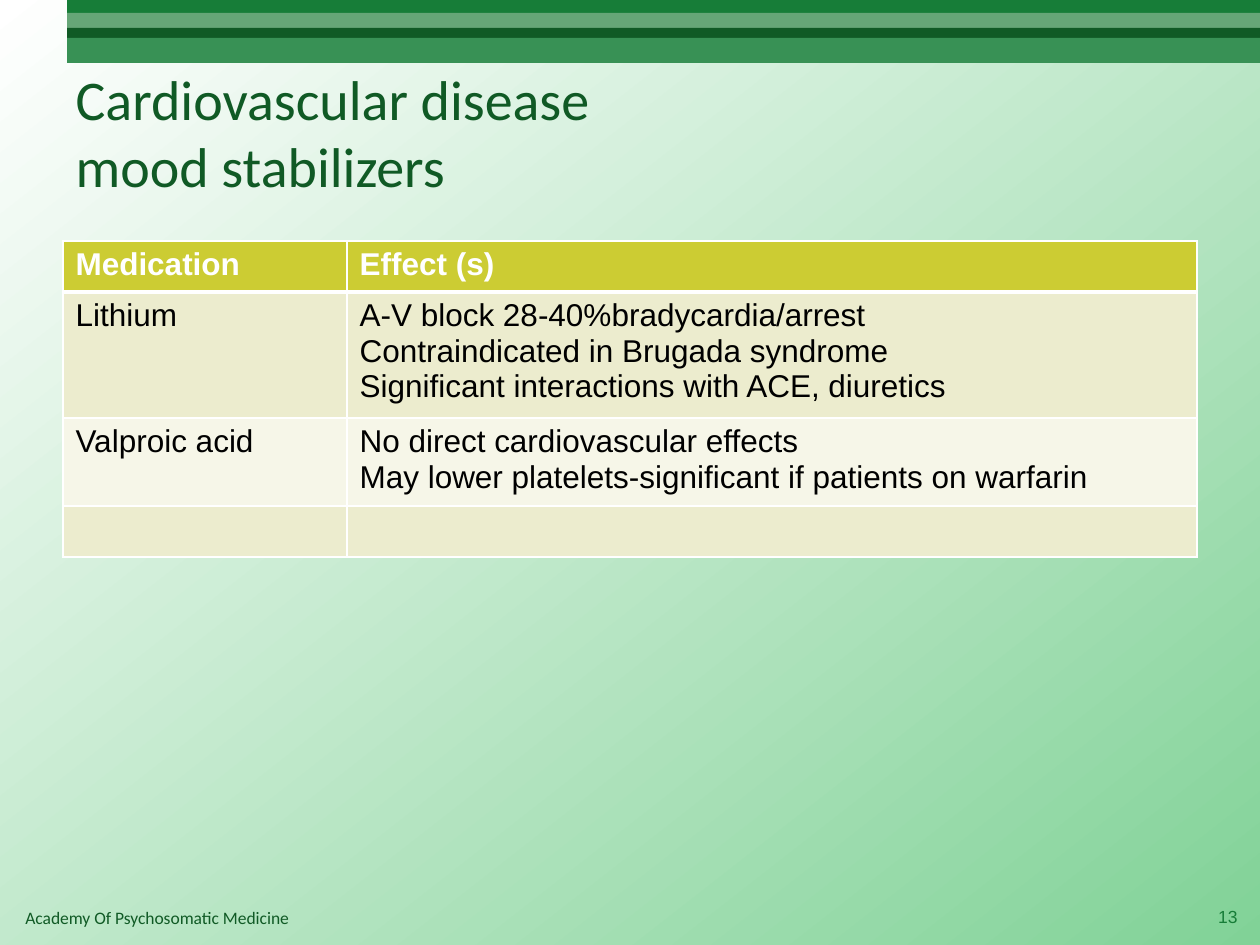
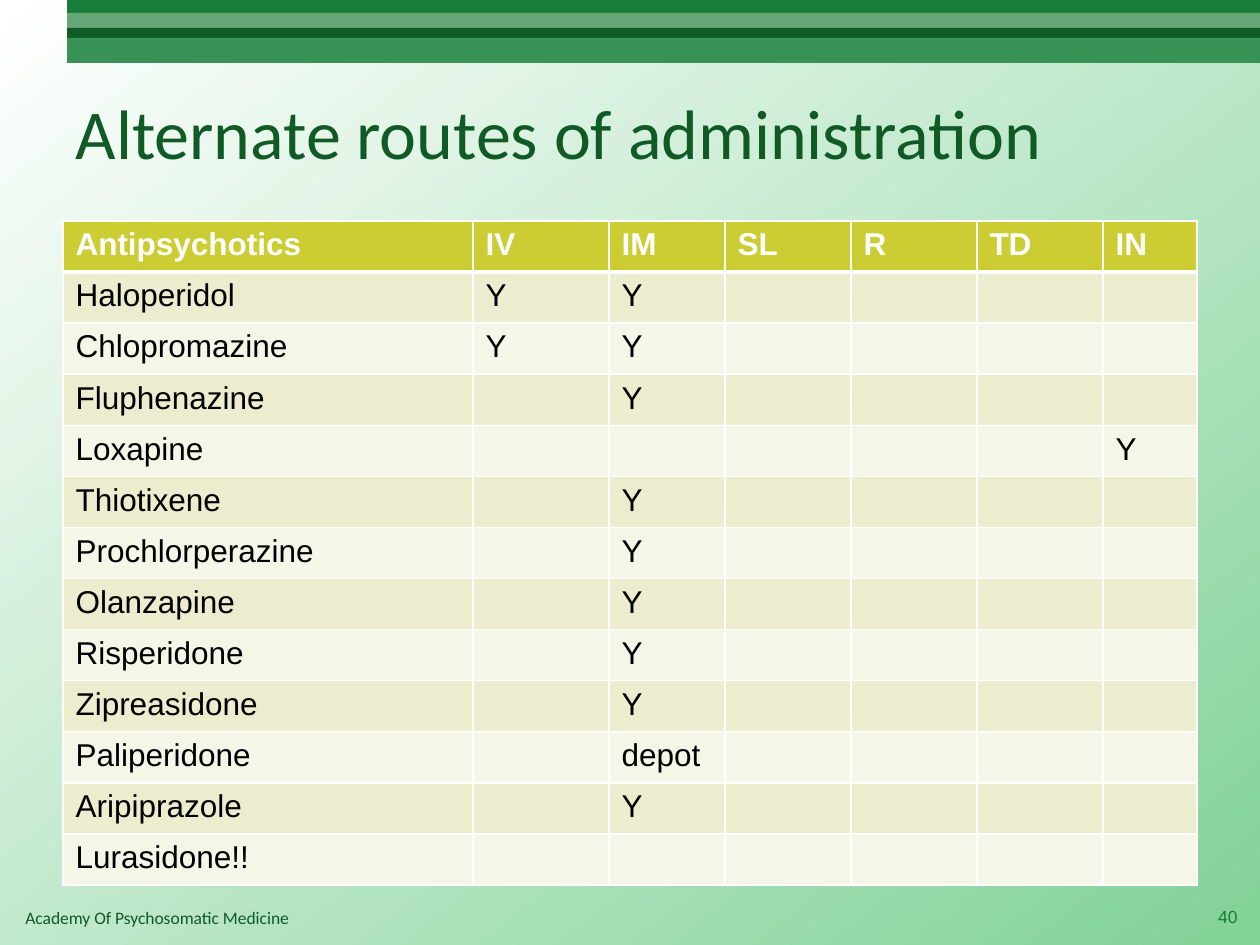
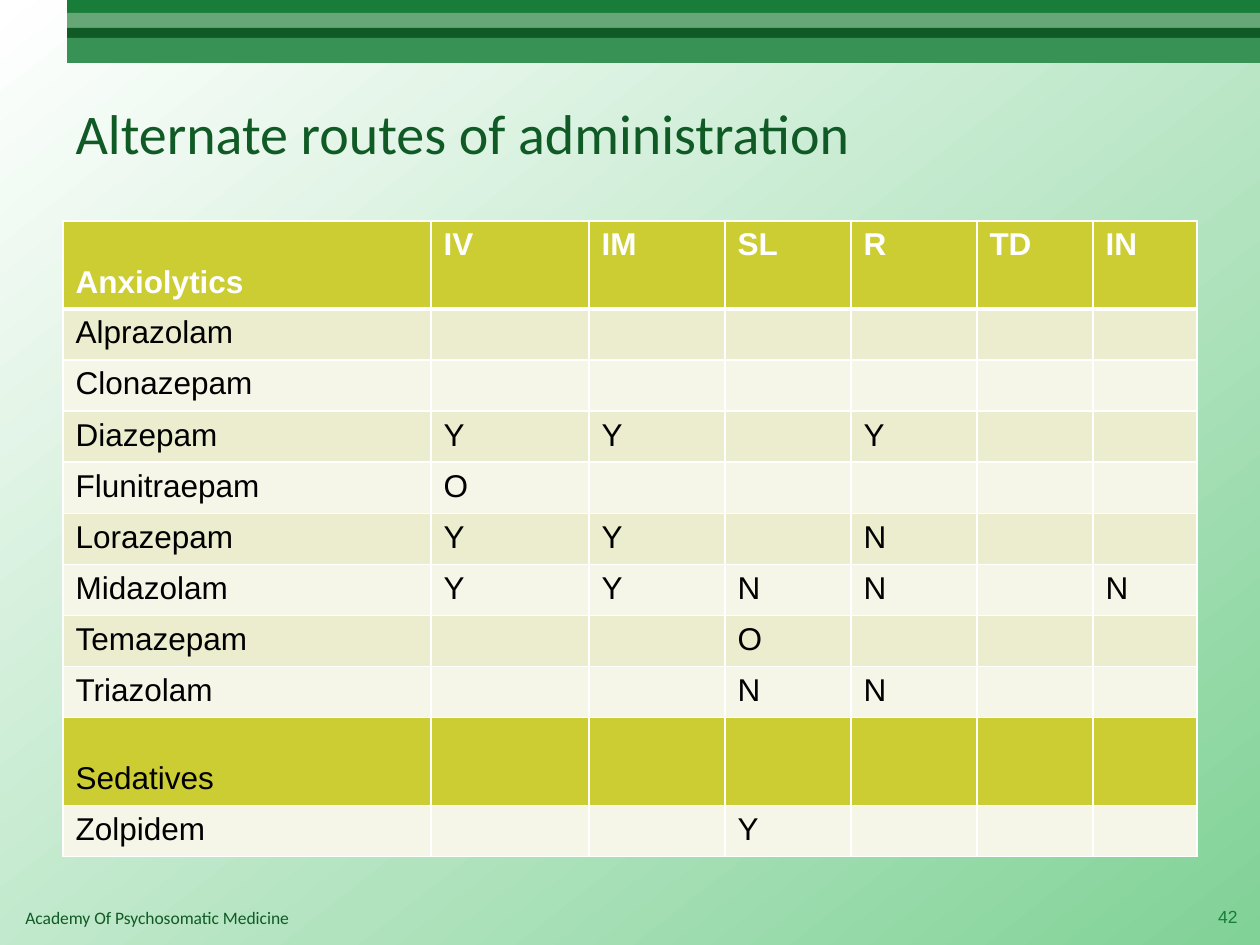
from pptx import Presentation
from pptx import util as u
from pptx.dml.color import RGBColor
from pptx.enum import shapes, text
from pptx.oxml import parse_xml
from pptx.oxml.ns import nsdecls

HUES = {
    "dark": "105A25", "green": "177D38", "mid": "389155", "pale": "66A677",
    "mint": "81D297", "white": "FFFFFF", "black": "000000",
    "head": "CCCC33", "odd": "ECECCE", "even": "F6F6E8",
}
FOOT = "Academy Of Psychosomatic Medicine"
ROUTES = "|IV|IM|SL|R|TD|IN"
ROW, TALL = 51, 88  # heights of one-line and two-line rows


def px(n):
    return u.Emu(n * 914400 // 126)


def style(frame, size, face, hue, bold=False, align=text.PP_ALIGN.LEFT):
    for para in frame.paragraphs:
        para.alignment = align
        for run in para.runs:
            run.font.size = u.Pt(size)
            run.font.name = face
            run.font.bold = bold
            run.font.color.rgb = RGBColor.from_string(HUES[hue])


# Each cell row is "name|column 1|column 2|..."; missing cells stay empty
pages = [
    {
        "title": "Cardiovascular disease\vmood stabilizers", "size": 32, "page": "13",
        "top": 241, "cols": [284, 850], "tall": {1: 126, 2: TALL}, "heads": [0],
        "rows": [
            "Medication|Effect (s)",
            "Lithium|A-V block 28-40%bradycardia/arrest\n"
            "Contraindicated in Brugada syndrome\n"
            "Significant interactions with ACE, diuretics",
            "Valproic acid|No direct cardiovascular effects\n"
            "May lower platelets-significant if patients on warfarin",
            "",
        ],
    },
    {
        "title": "Alternate routes of administration", "size": 40, "page": "40",
        "top": 221, "cols": [410, 136, 116, 126, 126, 126, 94], "tall": {}, "heads": [0],
        "rows": [
            "Antipsychotics" + ROUTES, "Haloperidol|Y|Y", "Chlopromazine|Y|Y",
            "Fluphenazine||Y", "Loxapine||||||Y", "Thiotixene||Y",
            "Prochlorperazine||Y", "Olanzapine||Y", "Risperidone||Y",
            "Zipreasidone||Y", "Paliperidone||depot", "Aripiprazole||Y",
            "Lurasidone!!",
        ],
    },
    {
        "title": "Alternate routes of administration", "size": 32, "page": "42",
        "top": 221, "cols": [368, 158, 136, 126, 126, 116, 104],
        "tall": {0: TALL, 9: TALL}, "heads": [0, 9],
        "rows": [
            "Anxiolytics" + ROUTES, "Alprazolam", "Clonazepam", "Diazepam|Y|Y||Y",
            "Flunitraepam|O", "Lorazepam|Y|Y||N", "Midazolam|Y|Y|N|N||N",
            "Temazepam|||O", "Triazolam|||N|N", "Sedatives", "Zolpidem|||Y",
        ],
    },
]

prs = Presentation()
prs.slide_width, prs.slide_height = px(1260), px(945)

# Shared layout: background, title place
base = prs.slide_layouts[5]
fill = base.background.fill
fill.gradient()
fill.gradient_angle = 308
for stop, hue in zip(fill.gradient_stops, ("white", "mint")):
    stop.color.rgb = RGBColor.from_string(HUES[hue])
for hold in list(base.placeholders):
    if hold.placeholder_format.idx:
        hold.element.getparent().remove(hold.element)
    else:
        hold.left, hold.top, hold.width, hold.height = px(63), px(53), px(1134), px(158)

# Shared bands and footer, drawn on the first slide and moved to the layout
first = prs.slides.add_slide(base)
parts = []
for top, high, hue in ((0, 14, "green"), (13, 16, "pale"), (28, 11, "dark"), (38, 25, "mid")):
    band = first.shapes.add_shape(shapes.MSO_SHAPE.RECTANGLE, px(67), px(top), px(1193), px(high))
    band.shadow.inherit = False
    band.fill.solid()
    band.fill.fore_color.rgb = RGBColor.from_string(HUES[hue])
    band.line.fill.background()
    parts.append(band)
foot = first.shapes.add_textbox(px(13), px(901), px(874), px(34))
foot.text_frame.word_wrap = True
foot.text_frame.text = FOOT
style(foot.text_frame, 10, "Calibri", "dark")
for part in parts + [foot]:
    base.shapes.element.append(part.element)

for num, page in enumerate(pages):
    slide = prs.slides.add_slide(base) if num else first

    # Title
    frame = slide.shapes.title.text_frame
    frame.text = page["title"]
    frame.auto_size = text.MSO_AUTO_SIZE.NONE
    frame.vertical_anchor = text.MSO_ANCHOR.MIDDLE
    style(frame, page["size"], "Calibri", "dark")

    # Table
    rows, cols = page["rows"], page["cols"]
    highs = [page["tall"].get(r, ROW) for r in range(len(rows))]
    grid = slide.shapes.add_table(len(rows), len(cols), px(63), px(page["top"]),
                                  px(sum(cols)), px(sum(highs))).table
    for c, wide in enumerate(cols):
        grid.columns[c].width = px(wide)
    for r, row in enumerate(rows):
        grid.rows[r].height = px(highs[r])
        words = row.split("|")
        head = r in page["heads"]
        for c in range(len(cols)):
            cell = grid.cell(r, c)
            cell.text = words[c] if c < len(words) else ""
            style(cell.text_frame, 18, "Arial", "black" if r else "white", bold=r == 0)
            if head and c == 0 and highs[r] == TALL:
                cell.vertical_anchor = text.MSO_ANCHOR.BOTTOM
                cell.margin_bottom = px(9)
            # The header's lower edge is thick, so only it draws a top edge
            for side in "LRB" if r else "LRTB":
                thick = u.Pt(3 if side == "B" and r == 0 else 1)
                cell._tc.get_or_add_tcPr().append(parse_xml(
                    f'<a:ln{side} {nsdecls("a")} w="{thick}"><a:solidFill>'
                    f'<a:srgbClr val="{HUES["white"]}"/></a:solidFill></a:ln{side}>'))
            cell.fill.solid()
            hue = "head" if head else "odd" if r % 2 else "even"
            cell.fill.fore_color.rgb = RGBColor.from_string(HUES[hue])

    # Page number
    frame = slide.shapes.add_textbox(px(1200), px(892), px(50), px(50)).text_frame
    frame.word_wrap = True
    frame.vertical_anchor = text.MSO_ANCHOR.MIDDLE
    frame.text = page["page"]
    style(frame, 10, "Arial", "green", align=text.PP_ALIGN.RIGHT)

prs.save("out.pptx")
